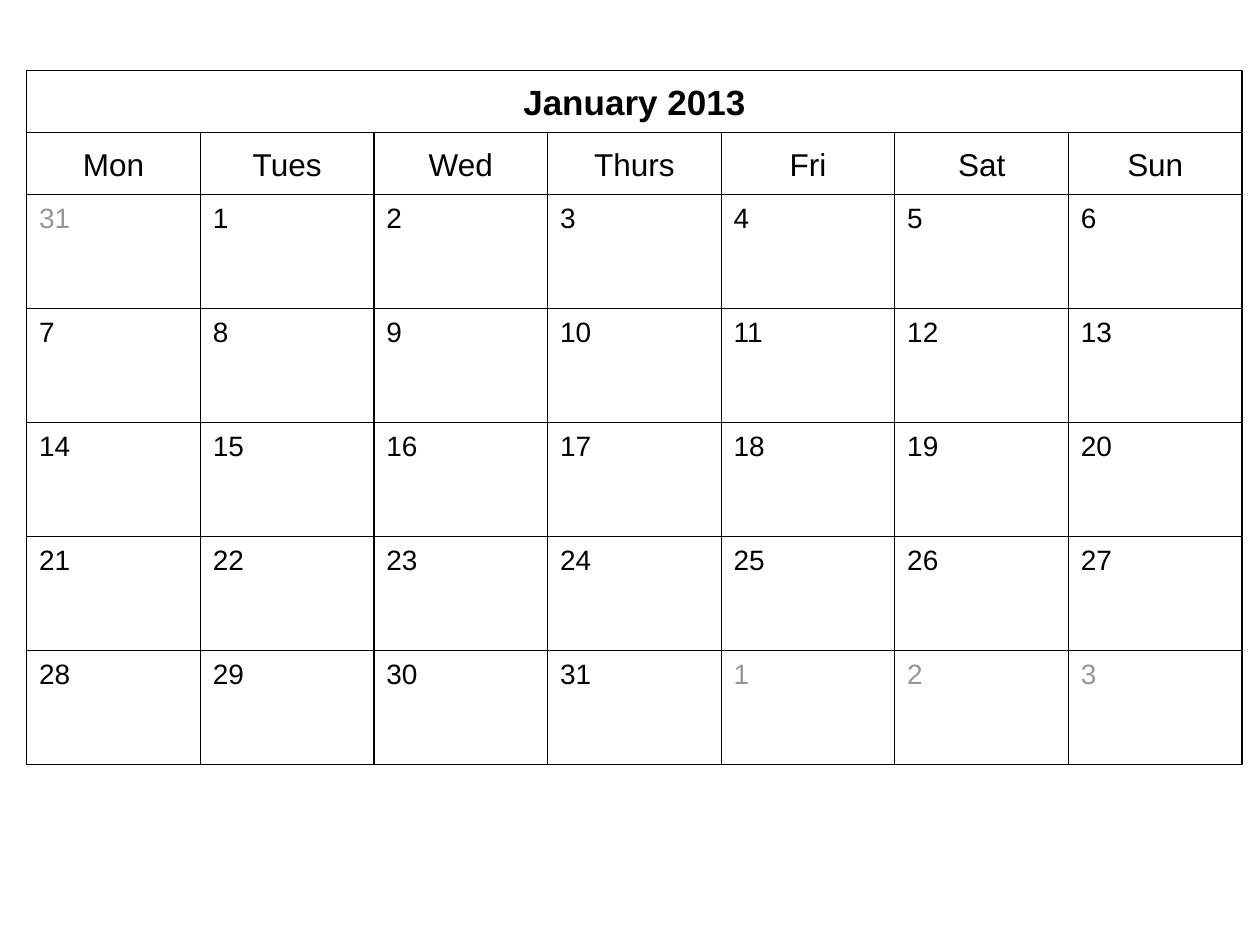
from pptx import Presentation
from pptx import util as u
from pptx.dml import color
from pptx.enum import shapes, text

BLACK, GREY, WHITE = "000000", "969696", "FFFFFF"
LEFT, TOP = 0.54, 1.42
DAY_WIDTH, HEAD_HEIGHT, WEEK_HEIGHT = 3.5, 1.25, 2.3
DAYS = ["Mon", "Tues", "Wed", "Thurs", "Fri", "Sat", "Sun"]

deck = Presentation()
deck.slide_width, deck.slide_height = u.Cm(25.4), u.Cm(19.05)
page = deck.slides.add_slide(deck.slide_layouts[6])


def rgb(value):
    return color.RGBColor.from_string(value)


def add_cell(left, top, width, height, label, size, ink=BLACK, heading=True):
    box = page.shapes.add_shape(shapes.MSO_SHAPE.RECTANGLE,
                                u.Cm(left), u.Cm(top), u.Cm(width), u.Cm(height))
    box.shadow.inherit = False
    box.line.color.rgb = rgb(BLACK)
    box.line.width = u.Pt(0.75)
    frame = box.text_frame
    frame.word_wrap = True
    para = frame.paragraphs[0]
    if heading:
        box.fill.solid()
        box.fill.fore_color.rgb = rgb(WHITE)
        frame.margin_top = frame.margin_bottom = u.Cm(0.05)
        frame.vertical_anchor = text.MSO_ANCHOR.MIDDLE
        para.alignment = text.PP_ALIGN.CENTER
    else:
        box.fill.background()
        frame.vertical_anchor = text.MSO_ANCHOR.TOP
        para.alignment = text.PP_ALIGN.LEFT
    span = para.add_run()
    span.text = label
    span.font.name = "Arial"
    span.font.size = u.Pt(size)
    span.font.color.rgb = rgb(ink)
    return span


# Month title
title = add_cell(LEFT, TOP, DAY_WIDTH * len(DAYS), HEAD_HEIGHT, "January 2013", 20)
title.font.bold = True

# Weekday names
for column, name in enumerate(DAYS):
    add_cell(LEFT + column * DAY_WIDTH, TOP + HEAD_HEIGHT,
             DAY_WIDTH, HEAD_HEIGHT, name, 18)

# Dates, with the neighbouring months in grey
dates = [(31, GREY)] + [(day, BLACK) for day in range(1, 32)]
dates += [(day, GREY) for day in range(1, 4)]
for index, (day, ink) in enumerate(dates):
    week, column = divmod(index, len(DAYS))
    add_cell(LEFT + column * DAY_WIDTH, TOP + 2 * HEAD_HEIGHT + week * WEEK_HEIGHT,
             DAY_WIDTH, WEEK_HEIGHT, str(day), 16, ink, heading=False)

deck.save("out.pptx")
